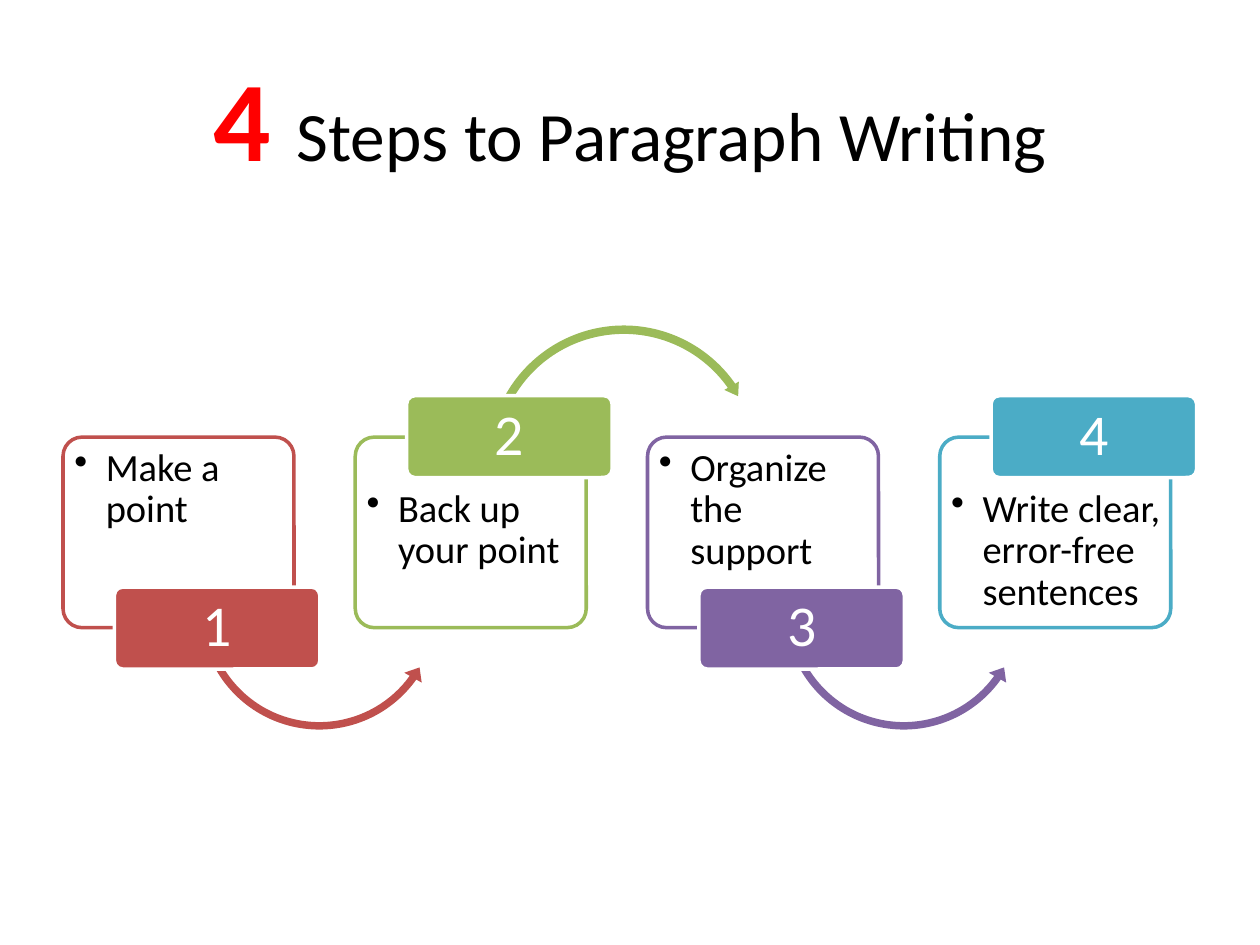
from lxml.etree import SubElement
from pptx import Presentation
from pptx.dml.color import RGBColor
from pptx.enum.shapes import MSO_SHAPE as Shape
from pptx.enum.text import MSO_ANCHOR as Anchor, MSO_AUTO_SIZE as AutoSize, PP_ALIGN as Align
from pptx.oxml.ns import qn
from pptx.util import Pt

RED = RGBColor(0xFF, 0x00, 0x00)
BLACK = RGBColor(0x00, 0x00, 0x00)
WHITE = RGBColor(0xFF, 0xFF, 0xFF)
BRICK = RGBColor(0xC0, 0x50, 0x4D)
GREEN = RGBColor(0x9B, 0xBB, 0x59)
PURPLE = RGBColor(0x80, 0x64, 0xA2)
TEAL = RGBColor(0x4B, 0xAC, 0xC6)

STEPS = [
    ("Make a point", BRICK),
    ("Back up your point", GREEN),
    ("Organize the support", PURPLE),
    ("Write clear, error-free sentences", TEAL),
]
LEFT, PITCH = 36, 167

LOWER = {
    "badge_top": 335.5, "text_top": 3, "arrow": Shape.LEFT_CIRCULAR_ARROW,
    "arrow_left": 74.8, "arrow_top": 277.2, "arrow_size": 143.3,
    "angles": [0.03, 3.64, 21.39, 90.25, 0.04],
}
UPPER = {
    "badge_top": 226.1, "text_top": 26.4, "arrow": Shape.CIRCULAR_ARROW,
    "arrow_left": 73.6, "arrow_top": 183.6, "arrow_size": 159.8,
    "angles": [0.03, 3.23, 195.02, 125.76, 0.03],
}


def add_figure(kind, left, top, width, height, fill, line, adjustments):
    figure = slide.shapes.add_shape(kind, Pt(left), Pt(top), Pt(width), Pt(height))
    figure.shadow.inherit = False
    figure.fill.solid()
    figure.fill.fore_color.rgb = fill
    if line is None:
        figure.line.fill.background()
    else:
        figure.line.color.rgb = line
        figure.line.width = Pt(2)
    for index, value in enumerate(adjustments):
        figure.adjustments[index] = value
    return figure


def write(para, text, color, **font_format):
    span = para.add_run()
    span.text = text
    span.font.name = "Calibri"
    span.font.color.rgb = color
    for name, value in font_format.items():
        setattr(span.font, name, value)


deck = Presentation()
deck.slide_width, deck.slide_height = Pt(720), Pt(540)
slide = deck.slides.add_slide(deck.slide_layouts[5])

title = slide.shapes.title
title_format = {"left": Pt(36), "top": Pt(21.6), "width": Pt(648), "height": Pt(90)}
for name, value in title_format.items():
    setattr(title, name, value)
title.text_frame.auto_size = AutoSize.NONE
title.text_frame.vertical_anchor = Anchor.MIDDLE
para = title.text_frame.paragraphs[0]
para.alignment = Align.CENTER
write(para, "4 ", RED, size=Pt(64.8), bold=True)
write(para, "Steps to Paragraph Writing", BLACK, size=Pt(39.6), bold=False)

for index, (text, color) in enumerate(STEPS):
    left = LEFT + index * PITCH
    side = UPPER if index % 2 else LOWER

    box = add_figure(Shape.ROUNDED_RECTANGLE, left, 249.8, 132, 108.9, WHITE, color, [0.1])
    box_format = {
        "word_wrap": True, "vertical_anchor": Anchor.TOP,
        "margin_left": Pt(3.3), "margin_right": Pt(1),
        "margin_top": Pt(side["text_top"]), "margin_bottom": Pt(0),
    }
    for name, value in box_format.items():
        setattr(box.text_frame, name, value)
    para = box.text_frame.paragraphs[0]
    para.alignment = Align.LEFT
    para.line_spacing = 0.9
    properties = para._p.get_or_add_pPr()
    properties.set("marL", str(Pt(18)))
    properties.set("indent", str(-Pt(18)))
    SubElement(properties, qn("a:buChar")).set("char", "•")
    write(para, text, BLACK, size=Pt(22))

    if index < len(STEPS) - 1:
        size = side["arrow_size"]
        add_figure(side["arrow"], left + side["arrow_left"], side["arrow_top"],
                   size, size, color, None, side["angles"])

    badge = add_figure(Shape.ROUNDED_RECTANGLE, left + 29.4, side["badge_top"],
                       117.4, 46.8, color, WHITE, [0.1])
    badge_format = {
        "word_wrap": True, "vertical_anchor": Anchor.MIDDLE,
        "margin_left": Pt(5), "margin_right": Pt(5),
        "margin_top": Pt(3.3), "margin_bottom": Pt(3.3),
    }
    for name, value in badge_format.items():
        setattr(badge.text_frame, name, value)
    para = badge.text_frame.paragraphs[0]
    para.alignment = Align.CENTER
    para.line_spacing = 0.9
    write(para, str(index + 1), WHITE, size=Pt(33))

deck.save("out.pptx")
